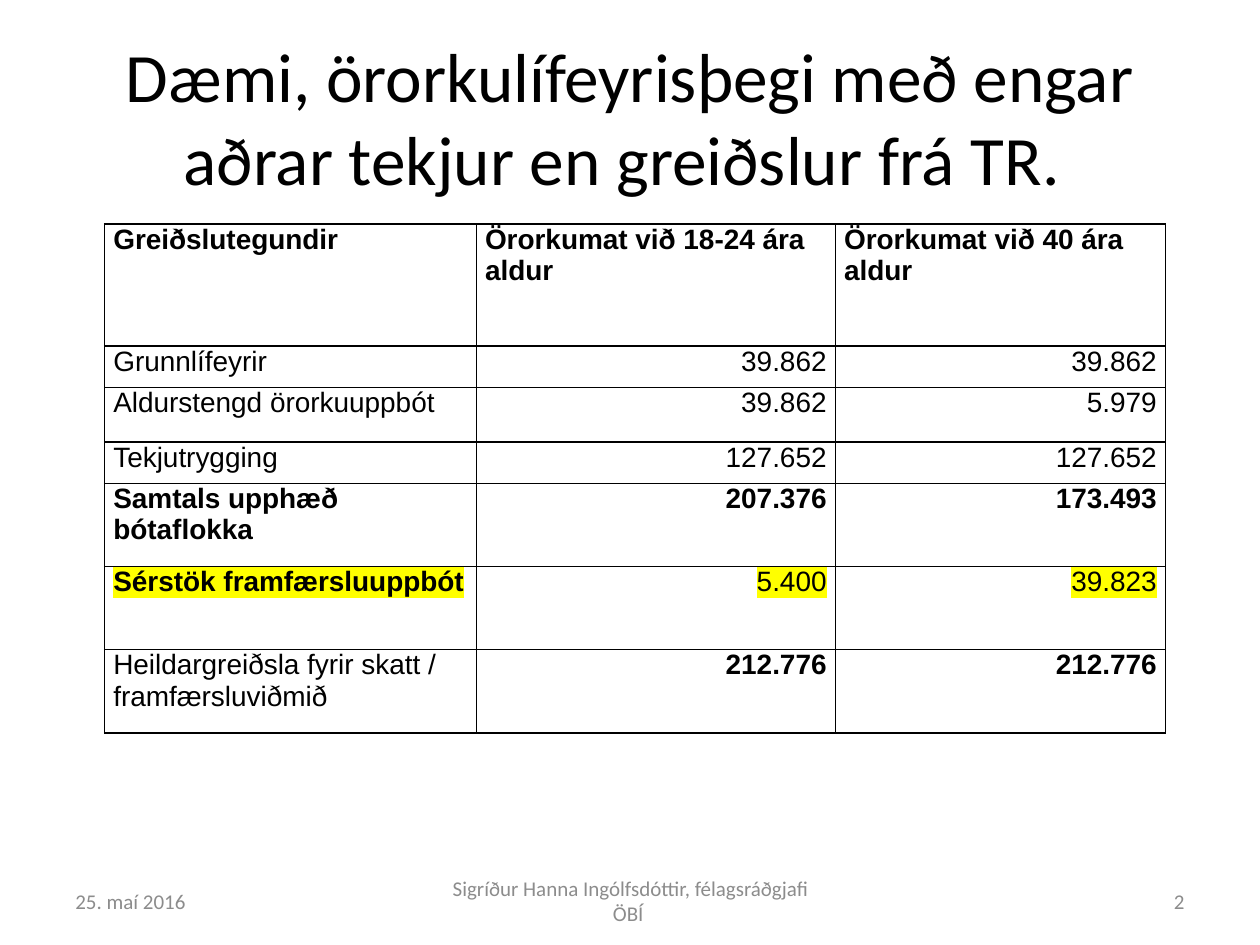
from lxml.etree import SubElement
from pptx import Presentation
from pptx.dml.color import RGBColor
from pptx.enum.text import MSO_ANCHOR, PP_ALIGN
from pptx.oxml import parse_xml
from pptx.oxml.ns import nsdecls, qn
from pptx.util import Inches, Pt

BLACK = RGBColor(0x00, 0x00, 0x00)
WHITE = RGBColor(0xFF, 0xFF, 0xFF)
GREY = RGBColor(0x8C, 0x8C, 0x8C)
YELLOW = RGBColor(0xFF, 0xFF, 0x00)

TITLE = "Dæmi, örorkulífeyrisþegi með engar aðrar tekjur en greiðslur frá TR. "
HEADINGS = ("Greiðslutegundir", "Örorkumat við 18-24 ára aldur", "Örorkumat við 40 ára aldur")
PAYMENTS = [
    (HEADINGS, 0.97, dict(bold_label=True, bold_values=True)),
    (("Grunnlífeyrir", "39.862", "39.862"), 0.33, {}),
    (("Aldurstengd örorkuuppbót", "39.862", "5.979"), 0.43, {}),
    (("Tekjutrygging", "127.652", "127.652"), 0.33, {}),
    (("Samtals upphæð bótaflokka", "207.376", "173.493"), 0.66,
     dict(bold_label=True, bold_values=True)),
    (("Sérstök framfærsluuppbót", "5.400", "39.823"), 0.66,
     dict(bold_label=True, highlight=YELLOW)),
    (("Heildargreiðsla fyrir skatt /  framfærsluviðmið", "212.776", "212.776"), 0.66,
     dict(bold_values=True)),
]
COLUMN_WIDTHS = (2.95, 2.85, 2.62)
FOOTERS = [
    ("25. maí 2016", 0.05, 0.233, PP_ALIGN.LEFT),
    ("Sigríður Hanna Ingólfsdóttir, félagsráðgjafi ÖBÍ ", 0.342, 0.317, PP_ALIGN.CENTER),
    ("2", 0.717, 0.233, PP_ALIGN.RIGHT),
]


def write(frame, text, size=16, font="Arial", color=BLACK, bold=False,
          align=PP_ALIGN.LEFT, highlight=None):
    paragraph = frame.paragraphs[0]
    paragraph.alignment = align
    span = paragraph.add_run()
    span.text = text
    span.font.size = Pt(size)
    span.font.name = font
    span.font.bold = bold
    span.font.color.rgb = color
    if highlight is not None:
        properties = span.font._element
        marker = SubElement(properties, qn("a:highlight"))
        SubElement(marker, qn("a:srgbClr")).set("val", str(highlight))
        properties.find(qn("a:solidFill")).addnext(marker)


def draw_borders(cell, color=BLACK, width=1):
    properties = cell._tc.get_or_add_tcPr()
    for index, side in enumerate(("lnL", "lnR", "lnT", "lnB")):
        properties.insert(index, parse_xml(
            f'<a:{side} {nsdecls("a")} w="{Pt(width)}"><a:solidFill>'
            f'<a:srgbClr val="{color}"/></a:solidFill></a:{side}>'))


class SlideBuilder:
    def __init__(self, deck):
        self.deck = deck
        self.page = deck.slides.add_slide(deck.slide_layouts[5])
        self.font = "Calibri"

    def area(self, left, top, width, height):
        across, down = self.deck.slide_width, self.deck.slide_height
        return int(left * across), int(top * down), int(width * across), int(height * down)

    def title(self, text, *shares):
        box = self.page.shapes.title
        box.left, box.top, box.width, box.height = self.area(*shares)
        box.text_frame.vertical_anchor = MSO_ANCHOR.MIDDLE
        write(box.text_frame, text, size=39.6, font=self.font, align=PP_ALIGN.CENTER)

    def footer(self, text, left, width, align):
        box = self.page.shapes.add_textbox(*self.area(left, 0.927, width, 0.053))
        box.text_frame.word_wrap = True
        box.text_frame.vertical_anchor = MSO_ANCHOR.MIDDLE
        write(box.text_frame, text, size=12, font=self.font, color=GREY, align=align)

    def table(self, rows, widths, *shares):
        grid = self.page.shapes.add_table(len(rows), len(widths), *self.area(*shares)).table
        for column, width in zip(grid.columns, widths):
            column.width = Inches(width)
        for row_index, (texts, height, style) in enumerate(rows):
            grid.rows[row_index].height = Inches(height)
            for column_index, text in enumerate(texts):
                self.cell(grid.cell(row_index, column_index), text,
                          is_label=column_index == 0, is_heading=row_index == 0, **style)

    def cell(self, cell, text, is_label, is_heading, bold_label=False,
             bold_values=False, highlight=None):
        cell.margin_left = cell.margin_right = Inches(0.07)
        cell.margin_top = cell.margin_bottom = 0
        cell.fill.solid()
        cell.fill.fore_color.rgb = WHITE
        draw_borders(cell)
        write(cell.text_frame, text, bold=bold_label if is_label else bold_values,
              align=PP_ALIGN.LEFT if is_label or is_heading else PP_ALIGN.RIGHT,
              highlight=highlight)


def main():
    deck = Presentation()
    deck.slide_width, deck.slide_height = Inches(10), Inches(7.5)
    builder = SlideBuilder(deck)
    builder.title(TITLE, 0.05, 0.04, 0.9, 0.167)
    for footer in FOOTERS:
        builder.footer(*footer)
    builder.table(PAYMENTS, COLUMN_WIDTHS, 0.083, 0.237, 0.843, 0.537)
    deck.save("out.pptx")


if __name__ == "__main__":
    main()
